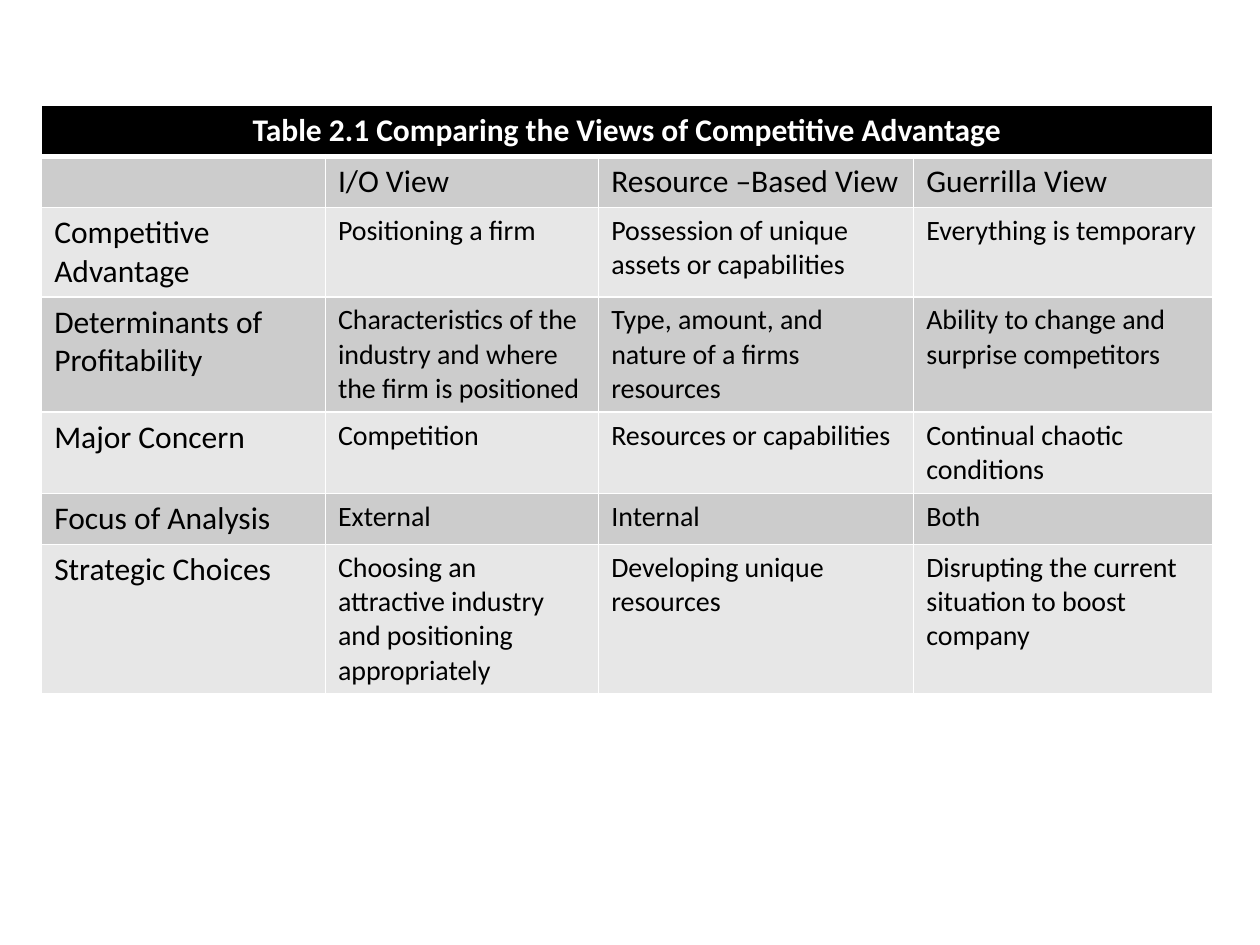
import dataclasses

import lxml.etree
import pptx
import pptx.dml.color
import pptx.enum.text
import pptx.oxml.ns
import pptx.util

Cm = pptx.util.Cm
Pt = pptx.util.Pt
RGB = pptx.dml.color.RGBColor.from_string
qn = pptx.oxml.ns.qn

HUES = {
    "title": "000000",
    "dark": "CCCCCC",
    "light": "E7E7E7",
    "ink": "000000",
    "white": "FFFFFF",
}
TITLE = "Table 2.1 Comparing the Views of Competitive Advantage"
WIDTHS = (5.72, 5.51, 6.35, 6.02)
HEIGHT = 1.03
LEFT, TOP = 0.84, 2.12


@dataclasses.dataclass
class Row:
    label: str
    views: tuple[str, str, str]
    size: int = 16


ROWS = [
    Row("", ("I/O View", "Resource –Based View", "Guerrilla View"), 18),
    Row("Competitive Advantage",
        ("Positioning a firm",
         "Possession of unique assets or capabilities",
         "Everything is temporary")),
    Row("Determinants of Profitability",
        ("Characteristics of the industry and where the firm is positioned",
         "Type, amount, and nature of a firms resources",
         "Ability to change and surprise competitors")),
    Row("Major Concern",
        ("Competition", "Resources or capabilities",
         "Continual chaotic conditions")),
    Row("Focus of Analysis", ("External", "Internal", "Both")),
    Row("Strategic Choices",
        ("Choosing an attractive industry and positioning appropriately",
         "Developing unique resources",
         "Disrupting the current situation to boost company")),
]


def border(cell, top: float = 1, base: float = 1) -> None:
    """Put white rules on the four sides, ahead of the cell's fill."""
    props = cell._tc.get_or_add_tcPr()
    sides = {"lnL": 1, "lnR": 1, "lnT": top, "lnB": base}
    for spot, (side, width) in enumerate(sides.items()):
        line = lxml.etree.Element(qn(f"a:{side}"), w=str(int(Pt(width))))
        fill = lxml.etree.SubElement(line, qn("a:solidFill"))
        lxml.etree.SubElement(fill, qn("a:srgbClr"), val=HUES["white"])
        props.insert(spot, line)


def write(cell, text: str, size: int, hue: str = "ink",
          bold: bool = False) -> None:
    cell.text_frame.text = text
    for run in cell.text_frame.paragraphs[0].runs:
        run.font.name = "Calibri"
        run.font.size = Pt(size)
        run.font.bold = bold
        run.font.color.rgb = RGB(HUES[hue])


def paint(cell, hue: str) -> None:
    cell.fill.solid()
    cell.fill.fore_color.rgb = RGB(HUES[hue])


def main() -> None:
    deck = pptx.Presentation()
    deck.slide_width, deck.slide_height = Cm(25.4), Cm(19.05)
    slide = deck.slides.add_slide(deck.slide_layouts[6])

    # Table grid
    count = len(ROWS) + 1
    table = slide.shapes.add_table(
        count, len(WIDTHS), Cm(LEFT), Cm(TOP),
        Cm(sum(WIDTHS)), Cm(HEIGHT * count)).table
    for col, width in zip(table.columns, WIDTHS):
        col.width = Cm(width)

    # Title row across all columns
    head = table.cell(0, 0)
    head.merge(table.cell(0, len(WIDTHS) - 1))
    write(head, TITLE, 18, "white", True)
    head.text_frame.paragraphs[0].alignment = pptx.enum.text.PP_ALIGN.CENTER
    for cell in table.rows[0].cells:
        paint(cell, "title")
        border(cell, base=3)

    # Banded rows, one label and three views each
    for i, row in enumerate(ROWS, 1):
        for j, text in enumerate((row.label, *row.views)):
            cell = table.cell(i, j)
            write(cell, text, row.size if j else 18)
            paint(cell, "dark" if i % 2 else "light")
            border(cell, top=3 if i == 1 else 1)

    deck.save("out.pptx")


if __name__ == "__main__":
    main()
